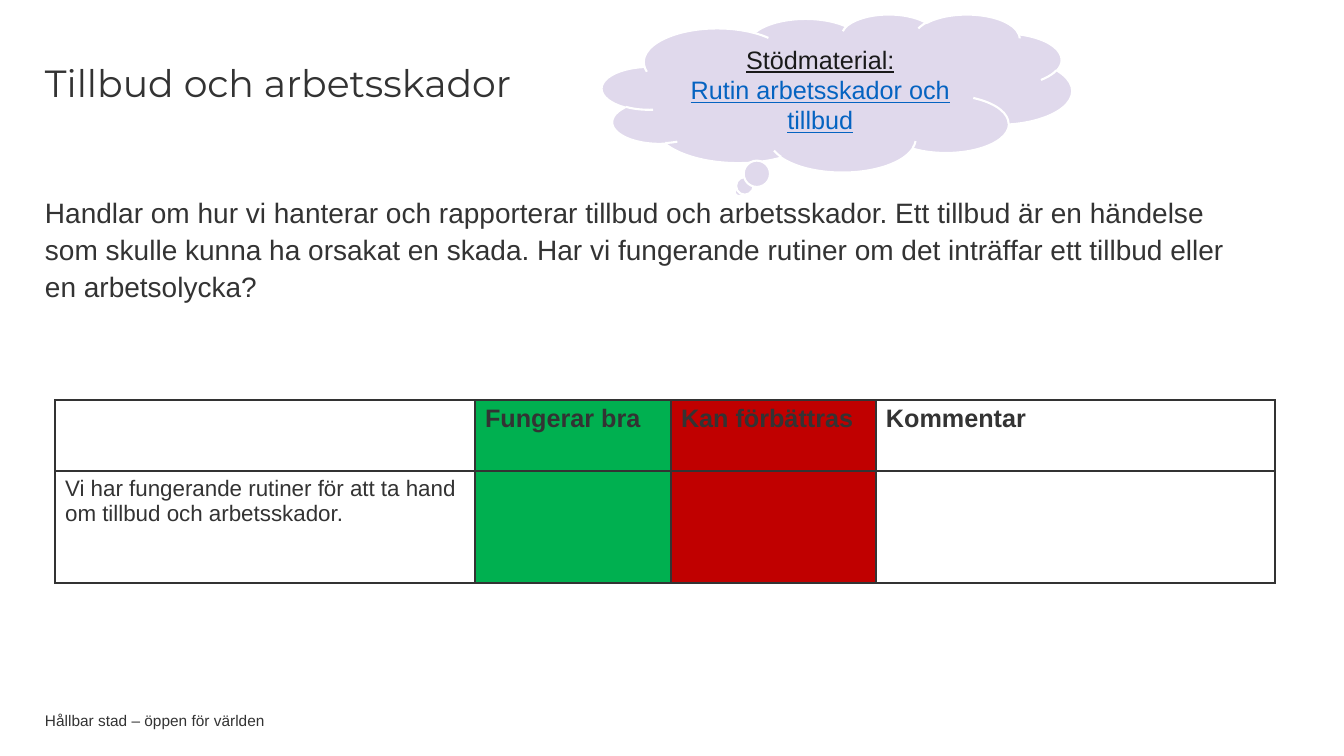
from lxml import etree
from pptx import Presentation
from pptx.dml.color import RGBColor
from pptx.enum.shapes import MSO_SHAPE
from pptx.enum.text import MSO_ANCHOR, PP_ALIGN
from pptx.oxml.ns import qn
from pptx.util import Pt

TOP, MIDDLE = MSO_ANCHOR.TOP, MSO_ANCHOR.MIDDLE
LEFT, CENTER = PP_ALIGN.LEFT, PP_ALIGN.CENTER
CLOUD = MSO_SHAPE.CLOUD_CALLOUT

COLORS = {
    "text": "333333", "dark": "1A1A1A", "link": "0563C1", "cloud": "E0D9EC",
    "white": "FFFFFF", "good": "00B050", "improve": "C00000",
}

TITLE = "Tillbud och arbetsskador"
BODY = ("Handlar om hur vi hanterar och rapporterar tillbud och arbetsskador. "
        "Ett tillbud är en händelse som skulle kunna ha orsakat en skada. "
        "Har vi fungerande rutiner om det inträffar ett tillbud eller en arbetsolycka?")
FOOTER = "Hållbar stad – öppen för världen"
SUPPORT = [("Stödmaterial:", "dark"), ("Rutin arbetsskador och tillbud", "link")]
ROWS = [
    ["", "Fungerar bra", "Kan förbättras", "Kommentar"],
    ["Vi har fungerande rutiner för att ta hand om tillbud och arbetsskador.", "", "", ""],
]
COLUMN_FILLS = [None, "good", "improve", None]
COLUMN_WIDTHS = [420, 196, 205, 399]
ROW_HEIGHTS = [71, 112]
BORDER_SIDES = ("a:lnL", "a:lnR", "a:lnT", "a:lnB")

EMU_PER_PX = 914400 / 100.8


def px(n):
    return round(n * EMU_PER_PX)


def rgb(name):
    return RGBColor.from_string(COLORS[name])


def write(p, text, size=18, font="Arial", color="text", bold=False,
          underline=False, align=LEFT, spacing=None):
    p.alignment = align
    if spacing:
        p.line_spacing = spacing
    r = p.add_run()
    r.text = text
    f = r.font
    f.size, f.name, f.bold, f.underline = Pt(size), font, bold, underline
    f.color.rgb = rgb(color)


def add_text(slide, text, box, anchor=TOP, **fmt):
    tf = slide.shapes.add_textbox(*map(px, box)).text_frame
    tf.word_wrap = True
    tf.vertical_anchor = anchor
    tf.margin_left = tf.margin_right = tf.margin_top = tf.margin_bottom = 0
    write(tf.paragraphs[0], text, **fmt)


def add_borders(cell):
    tc_pr = cell._tc.get_or_add_tcPr()
    for i, side in enumerate(BORDER_SIDES):
        ln = etree.Element(qn(side), w=str(Pt(1)))
        fill = etree.SubElement(ln, qn("a:solidFill"))
        etree.SubElement(fill, qn("a:srgbClr"), val=COLORS["text"])
        tc_pr.insert(i, ln)


def add_rating_table(slide, left, top):
    frame = slide.shapes.add_table(
        len(ROWS), len(COLUMN_WIDTHS), px(left), px(top),
        px(sum(COLUMN_WIDTHS)), px(sum(ROW_HEIGHTS)))
    table = frame.table
    for column, width in zip(table.columns, COLUMN_WIDTHS):
        column.width = px(width)
    for i, (texts, height) in enumerate(zip(ROWS, ROW_HEIGHTS)):
        table.rows[i].height = px(height)
        header = i == 0
        for j, (text, fill) in enumerate(zip(texts, COLUMN_FILLS)):
            cell = table.cell(i, j)
            if fill:
                cell.fill.solid()
                cell.fill.fore_color.rgb = rgb(fill)
            else:
                cell.fill.background()
            add_borders(cell)
            if text:
                write(cell.text_frame.paragraphs[0], text,
                      size=18 if header else 16, bold=header)


def add_support_cloud(slide, box):
    sp = slide.shapes.add_shape(CLOUD, *map(px, box))
    sp.shadow.inherit = False
    sp.fill.solid()
    sp.fill.fore_color.rgb = rgb("cloud")
    sp.line.color.rgb = rgb("white")
    sp.line.width = Pt(1.5)
    tf = sp.text_frame
    tf.word_wrap = True
    tf.vertical_anchor = MIDDLE
    for i, (text, color) in enumerate(SUPPORT):
        p = tf.add_paragraph() if i else tf.paragraphs[0]
        write(p, text, color=color, underline=True, align=CENTER)


def main():
    prs = Presentation()
    prs.slide_width, prs.slide_height = px(1344), px(756)
    slide = prs.slides.add_slide(prs.slide_layouts[6])
    add_text(slide, FOOTER, (45, 712, 953, 16), anchor=MIDDLE, size=11)
    add_text(slide, TITLE, (45, 44, 1011, 82), anchor=MIDDLE,
             size=27, font="Montserrat", spacing=0.9)
    add_text(slide, BODY, (45, 192, 1200, 460), size=20, spacing=1.1)
    add_rating_table(slide, 55, 400)
    add_support_cloud(slide, (602, 14, 470, 158))
    prs.save("out.pptx")


if __name__ == "__main__":
    main()
